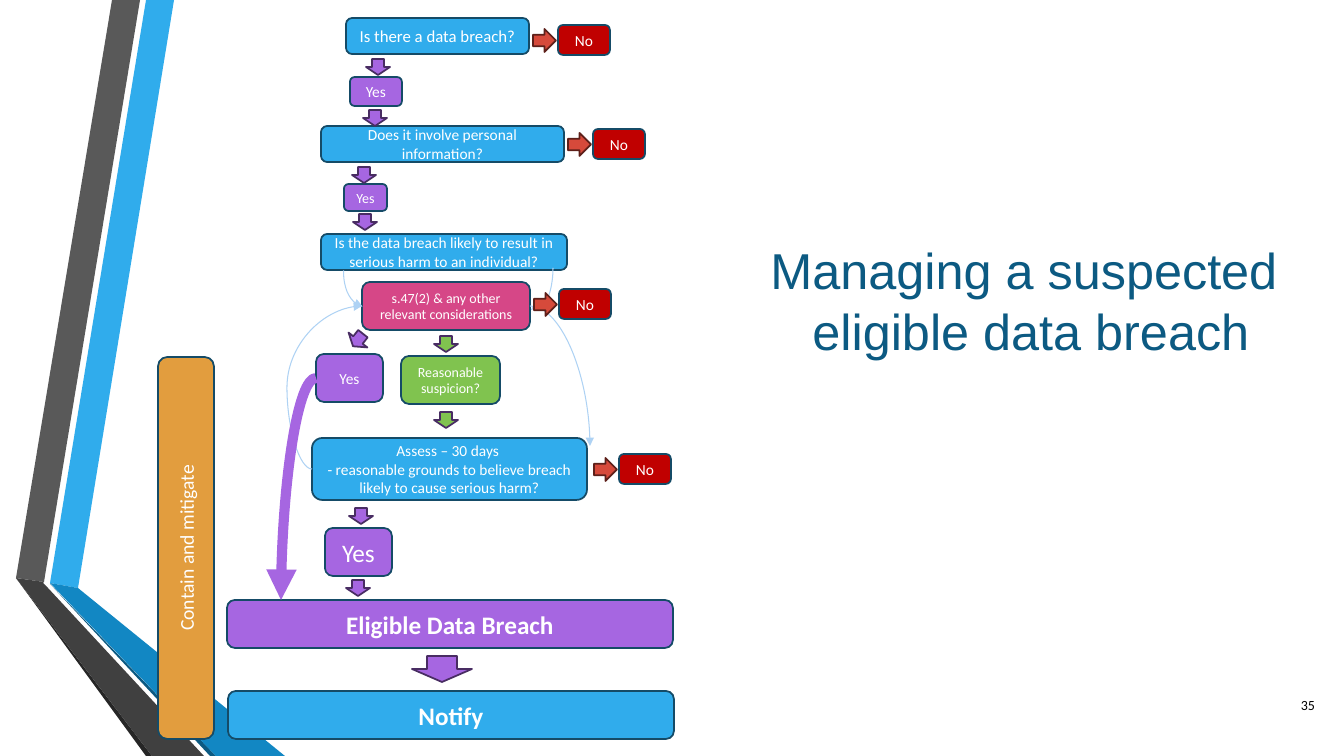
from lxml import etree
from pptx import Presentation
from pptx.dml.color import RGBColor
from pptx.enum.shapes import MSO_CONNECTOR, MSO_SHAPE
from pptx.enum.text import MSO_ANCHOR, MSO_AUTO_SIZE, PP_ALIGN
from pptx.oxml.ns import qn
from pptx.util import Pt

ROUND, DOWN, RIGHT = MSO_SHAPE.ROUNDED_RECTANGLE, MSO_SHAPE.DOWN_ARROW, MSO_SHAPE.RIGHT_ARROW
CURVE = MSO_CONNECTOR.CURVE
MIDDLE, TOP = MSO_ANCHOR.MIDDLE, MSO_ANCHOR.TOP
CENTER, END = PP_ALIGN.CENTER, PP_ALIGN.RIGHT
FIXED = MSO_AUTO_SIZE.NONE

SCALE = 914400 / 100.8
WIDE, HIGH = 1344, 756
BLUE, PURPLE, GREEN, RED = "30ACEC", "A666E1", "80C34F", "C00000"
PINK, ORANGE, CORAL, PALE = "D64787", "E29D3E", "D64A3B", "AED2F4"
WHITE, BLACK, NAVY = "FFFFFF", "000000", "0C5A82"
EDGE, PLUM, RUST = "154B67", "492D63", "5E201A"

TITLE = ["Managing a suspected ", "eligible data breach"]
PAGE = "35"

BANDS = [
    (BLUE, [(50, 583), (78, 588), (174, 0), (146, 0)]),
    ("595959", [(140, 0), (112, 0), (16, 578), (44, 582)]),
    ("262626", [(16, 578), (146, 756), (152, 756)]),
    (NAVY, [(50, 584), (210, 756), (216, 756)]),
    ("1287C3", [(50, 583), (216, 756), (285, 756), (78, 588)]),
    ("404040", [(204, 756), (48, 588), (43, 583), (44, 582), (16, 578), (152, 756)]),
]

STEPS = [
    (346, 18, 183, 36, BLUE, 12, ["Is there a data breach?"]),
    (350, 77, 52, 29, PURPLE, 11, ["Yes"]),
    (321, 126, 243, 36, BLUE, 11, ["Does it involve personal information?"]),
    (344, 184, 43, 27, PURPLE, 10, ["Yes"]),
    (321, 234, 246, 36, BLUE, 11,
     ["Is the data breach likely to result in serious harm to an individual?"]),
    (362, 282, 168, 48, PINK, 10, ["s.47(2) & any other relevant considerations"]),
    (316, 354, 67, 48, PURPLE, 11, ["Yes"]),
    (401, 356, 99, 48, GREEN, 10, ["Reasonable suspicion?"]),
    (312, 438, 275, 62, BLUE, 11,
     ["Assess – 30 days ",
      "- reasonable grounds to believe breach likely to cause serious harm?"]),
    (325, 528, 67, 48, PURPLE, 18, ["Yes"]),
]
ENDS = [
    (227, 600, 446, 48, PURPLE, 18, ["Eligible Data Breach"]),
    (228, 691, 446, 48, BLUE, 18, ["Notify"]),
]
SIDE = (158, 357, 56, 382, ORANGE, 14, ["Contain and mitigate"])

CURVES = [
    (335, 279, 36, 19, 270, "h", 2, None, PALE, 0.75),
    (521, 278, 42, 22, 90, "", 3, 0.87, PALE, 0.75),
    (312, 306, 50, 163, 180, "h", 3, -0.5, PALE, 0.75),
    (530, 306, 60, 140, 0, "", 2, None, PALE, 0.75),
    (281, 378, 35, 222, 180, "v", 2, None, PURPLE, 7.25),
]

DROPS = [
    (366, 59, PURPLE, 0), (363, 110, PURPLE, 0), (352, 167, PURPLE, 0),
    (353, 214, PURPLE, 0), (346, 332, PURPLE, 38.4), (434, 336, GREEN, 0),
    (434, 412, GREEN, 0), (349, 508, PURPLE, 0), (346, 580, PURPLE, 0),
]
LAST = (412, 656, 60, 26)
DROP_W, DROP_H = 24, 16

EXITS = [(558, 25), (593, 129), (559, 289), (619, 454)]
EXIT_W, EXIT_H = 52, 30
TURN, BACK, LOWER = 23, 25, 4


def px(n):
    return round(n * SCALE)


def tint(code):
    return RGBColor.from_string(code)


def write(frame, lines, size, code, font="Calibri", align=CENTER, anchor=MIDDLE, bold=False):
    frame.word_wrap = True
    frame.auto_size = FIXED
    frame.vertical_anchor = anchor
    for i, line in enumerate(lines):
        para = frame.paragraphs[0] if i == 0 else frame.add_paragraph()
        para.alignment = align
        run = para.add_run()
        run.text = line
        run.font.size = Pt(size)
        run.font.name = font
        run.font.bold = bold
        run.font.color.rgb = tint(code)


def draw(kind, x, y, w, h, fill, edge):
    shape = slide.shapes.add_shape(kind, px(x), px(y), px(w), px(h))
    shape.shadow.inherit = False
    shape.fill.solid()
    shape.fill.fore_color.rgb = tint(fill)
    shape.line.color.rgb = tint(edge)
    shape.line.width = Pt(1.25)
    return shape


def box(x, y, w, h, fill, size, lines, bold=False):
    shape = draw(ROUND, x, y, w, h, fill, EDGE)
    write(shape.text_frame, lines, size, WHITE, bold=bold)
    return shape


def band(fill, dots):
    pen = slide.shapes.build_freeform(*dots[0], scale=SCALE)
    pen.add_line_segments(dots[1:], close=True)
    shape = pen.convert_to_shape()
    shape.shadow.inherit = False
    shape.fill.solid()
    shape.fill.fore_color.rgb = tint(fill)
    shape.line.fill.background()


def curve(x, y, w, h, turn, flip, kind, bend, code, width):
    left, right = (x + w, x) if flip == "h" else (x, x + w)
    top, low = (y + h, y) if flip == "v" else (y, y + h)
    link = slide.shapes.add_connector(CURVE, px(left), px(top), px(right), px(low))
    link.line.color.rgb = tint(code)
    link.line.width = Pt(width)
    props = link._element.spPr
    props.find(qn("a:xfrm")).set("rot", str(turn * 60000))
    geom = props.find(qn("a:prstGeom"))
    geom.set("prst", f"curvedConnector{kind}")
    if bend is not None:
        guide = etree.SubElement(geom.find(qn("a:avLst")), qn("a:gd"))
        guide.set("name", "adj1")
        guide.set("fmla", f"val {round(bend * 100000)}")
    etree.SubElement(props.find(qn("a:ln")), qn("a:tailEnd")).set("type", "triangle")
    etree.SubElement(props, qn("a:effectLst"))


deck = Presentation()
deck.slide_width, deck.slide_height = px(WIDE), px(HIGH)
slide = deck.slides.add_slide(deck.slide_layouts[5])

title = slide.shapes.title
title.left, title.top, title.width, title.height = px(758), px(234), px(546), px(132)
write(title.text_frame, TITLE, 36, NAVY, font="Arial", anchor=TOP)
for para in title.text_frame.paragraphs:
    para.line_spacing = Pt(43.5)

for item in BANDS:
    band(*item)

page = slide.shapes.add_textbox(px(1265), px(685), px(60), px(40))
write(page.text_frame, [PAGE], 10, BLACK, align=END)

for item in STEPS:
    box(*item)
for item in ENDS:
    box(*item, bold=True)
side = box(*SIDE)
side.text_frame._txBody.bodyPr.set("vert", "vert270")

for item in CURVES:
    curve(*item)

for x, y, fill, turn in DROPS:
    draw(DOWN, x, y, DROP_W, DROP_H, fill, PLUM).rotation = turn
draw(DOWN, *LAST, PURPLE, PLUM)

for x, y in EXITS:
    box(x, y, EXIT_W, EXIT_H, RED, 11, ["No"])
    draw(RIGHT, x - BACK, y + LOWER, TURN, TURN, CORAL, RUST)

deck.save("out.pptx")
